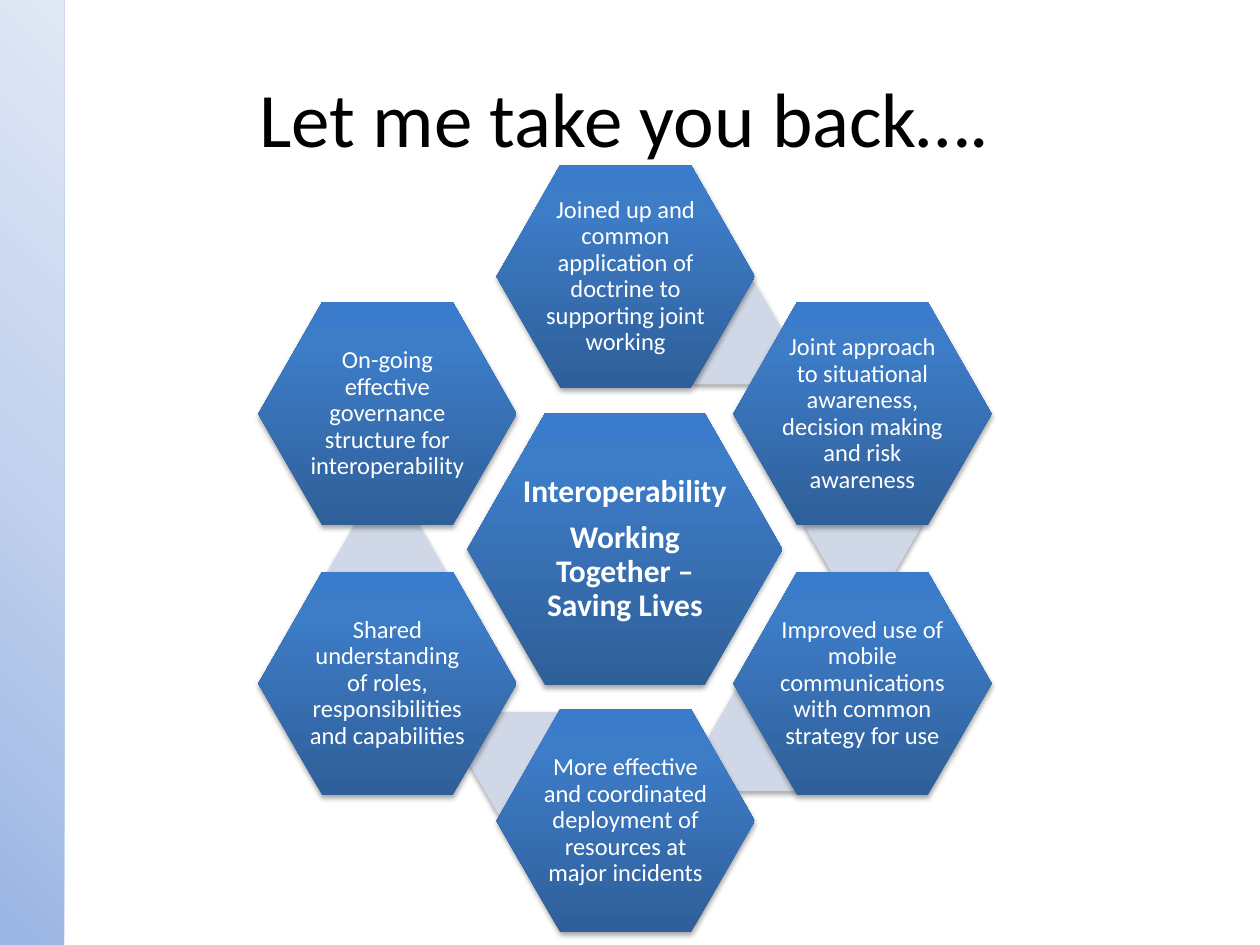
from copy import deepcopy
from lxml import etree
from pptx import Presentation
from pptx.dml.color import RGBColor
from pptx.enum.shapes import MSO_SHAPE
from pptx.enum.text import MSO_ANCHOR, PP_ALIGN
from pptx.oxml.ns import qn
from pptx.util import Inches, Pt

HEXAGON, RECT = MSO_SHAPE.HEXAGON, MSO_SHAPE.RECTANGLE
MIDDLE, CENTER = MSO_ANCHOR.MIDDLE, PP_ALIGN.CENTER

THEME = {
    "font": "Calibri",
    "title": {"size": 44, "color": "000000", "bold": False},
    "hub": {"size": 18, "color": "FFFFFF", "bold": True},
    "outer": {"size": 14, "color": "FFFFFF", "bold": False},
    "band": [(0, "9AB5E4"), (0.5, "C2D1ED"), (1, "E1E8F5")],
    "hexagon": [(0, "2F5F99"), (0.8, "3D7CC7"), (1, "3A7CCB")],
    "link": "D0D8E8",
    "shadow": "000000",
}


def add_filled(kind, box, colors, angle=90, shadow=True):
    sp = s.shapes.add_shape(kind, *map(Inches, box))
    sp.line.fill.background()
    sp.shadow.inherit = False
    if isinstance(colors, str):
        sp.fill.solid()
        sp.fill.fore_color.rgb = RGBColor.from_string(colors)
    else:
        sp.fill.gradient()
        sp.fill.gradient_angle = angle
        stops = sp._element.spPr.find(qn("a:gradFill")).find(qn("a:gsLst"))
        stops.append(deepcopy(stops[0]))
        for stop, (position, color) in zip(sp.fill.gradient_stops, colors):
            stop.position = position
            stop.color.rgb = RGBColor.from_string(color)
    if shadow:
        effects = sp._element.spPr.find(qn("a:effectLst"))
        outer = etree.SubElement(effects, qn("a:outerShdw"), blurRad=str(Pt(3.1)),
                                 dist=str(Pt(1.8)), dir="5400000", rotWithShape="0")
        color = etree.SubElement(outer, qn("a:srgbClr"), val=THEME["shadow"])
        etree.SubElement(color, qn("a:alpha"), val="35000")
    return sp


def write(sp, lines, style, spacing, inset):
    tf = sp.text_frame
    frame = {"word_wrap": True, "vertical_anchor": MIDDLE}
    for side in ("left", "right", "top", "bottom"):
        frame[f"margin_{side}"] = Inches(inset)
    for name, value in frame.items():
        setattr(tf, name, value)
    for i, line in enumerate(lines):
        p = tf.paragraphs[0] if i == 0 else tf.add_paragraph()
        last = i == len(lines) - 1
        layout = {"alignment": CENTER, "line_spacing": spacing, "space_before": Pt(0),
                  "space_after": Pt(0 if last else style["size"] * 0.35)}
        for name, value in layout.items():
            setattr(p, name, value)
        r = p.add_run()
        r.text = line
        font = {"name": THEME["font"], "size": Pt(style["size"]), "bold": style["bold"]}
        for name, value in font.items():
            setattr(r.font, name, value)
        r.font.color.rgb = RGBColor.from_string(style["color"])


prs = Presentation()
prs.slide_width, prs.slide_height = Inches(10), Inches(7.5)
s = prs.slides.add_slide(prs.slide_layouts[5])

add_filled(RECT, (0, 0, 0.51, 7.5), THEME["band"], angle=45, shadow=False)

title = s.shapes.title
place = {"left": 0.71, "top": 0.3, "width": 8.5, "height": 1.25}
for name, value in place.items():
    setattr(title, name, Inches(value))
write(title, ["Let me take you back…."], THEME["title"], 1, 0.05)

hub = add_filled(HEXAGON, (3.71, 3.28, 2.5, 2.16), THEME["hexagon"])
hub.adjustments[0] = 0.286
write(hub, ["Interoperability", "Working Together – Saving Lives"], THEME["hub"], 0.9, 0.02)

LEFT, MID, RIGHT = 2.05, 3.94, 5.82
TOP, UPPER, LOWER, BOTTOM = 1.31, 2.4, 4.54, 5.63
ring = [
    (MID, TOP, (5.28, 2.24),
     "Joined up and common application of doctrine to supporting joint working"),
    (RIGHT, UPPER, (6.38, 3.76),
     "Joint approach to situational awareness, decision making and risk awareness"),
    (RIGHT, LOWER, (5.61, 5.47),
     "Improved use of mobile communications with common strategy for use"),
    (MID, BOTTOM, (3.72, 5.65),
     "More effective and coordinated deployment of resources at major incidents"),
    (LEFT, LOWER, (2.6, 4.13),
     "Shared understanding of roles, responsibilities and capabilities"),
    (LEFT, UPPER, None,
     "On-going effective governance structure for interoperability"),
]
for x, y, link_at, text in ring:
    if link_at:
        link = add_filled(HEXAGON, (*link_at, 0.94, 0.81), THEME["link"])
        link.adjustments[0] = 0.289
    sp = add_filled(HEXAGON, (x, y, 2.05, 1.77), THEME["hexagon"])
    sp.adjustments[0] = 0.286
    write(sp, [text], THEME["outer"], 0.9, 0.02)

prs.save("out.pptx")
